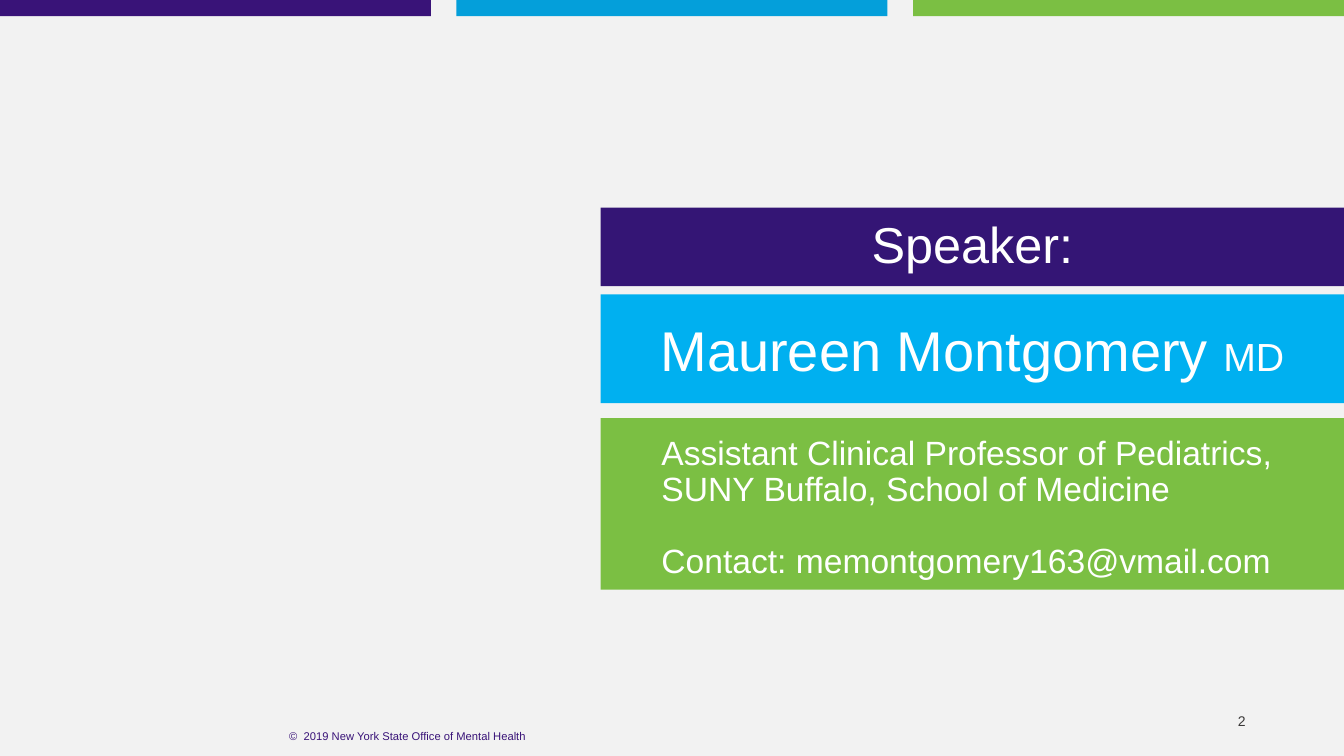
from pptx import Presentation
from pptx.dml.color import RGBColor
from pptx.enum.shapes import MSO_SHAPE as Preset
from pptx.enum.text import MSO_ANCHOR as Anchor, PP_ALIGN as Align
from pptx.util import Cm, Pt

COLORS = {
    "page": "F2F2F2",
    "purple": "391378",
    "blue": "049FDA",
    "green": "7BBF43",
    "title_band": "341575",
    "name_band": "00B0F0",
    "white": "FFFFFF",
    "page_number": "3A3838",
}
SLIDE_WIDTH, SLIDE_HEIGHT = 33.87, 19.05
STRIPE_WIDTH, STRIPE_HEIGHT = 10.86, 0.41
BAND_LEFT, BAND_WIDTH = 15.14, 18.73


def rgb(name):
    return RGBColor.from_string(COLORS[name])


def add_band(slide, left, top, width, height, color):
    band = slide.shapes.add_shape(
        Preset.RECTANGLE, Cm(left), Cm(top), Cm(width), Cm(height))
    band.shadow.inherit = False
    band.fill.solid()
    band.fill.fore_color.rgb = rgb(color)
    band.line.fill.background()
    return band


def add_text_box(slide, left, top, width, height):
    return slide.shapes.add_textbox(Cm(left), Cm(top), Cm(width), Cm(height))


def write(shape, paragraphs, color="white", align=Align.CENTER, spacing=1.0,
          gap=0, anchor=Anchor.MIDDLE, wrap=True):
    frame = shape.text_frame
    frame.word_wrap = wrap
    frame.vertical_anchor = anchor
    frame.margin_left = frame.margin_right = Cm(0.13)
    frame.margin_top = frame.margin_bottom = Cm(0.13)
    for index, runs in enumerate(paragraphs):
        paragraph = frame.add_paragraph() if index else frame.paragraphs[0]
        paragraph.alignment = align
        paragraph.line_spacing = spacing
        if index:
            paragraph.space_before = Pt(gap)
        for text, size in runs:
            for line_number, line in enumerate(text.split("\n")):
                if line_number:
                    paragraph.add_line_break()
                run = paragraph.add_run()
                run.text = line
                run.font.name = "Arial"
                run.font.size = Pt(size)
                run.font.color.rgb = rgb(color)


def add_stripes(slide):
    step = (SLIDE_WIDTH - STRIPE_WIDTH) / 2
    for index, color in enumerate(("purple", "blue", "green")):
        add_band(slide, index * step, 0, STRIPE_WIDTH, STRIPE_HEIGHT, color)


def add_footer(slide):
    copyright_line = add_text_box(slide, 4.6, 18.24, 11.35, 0.61)
    write(copyright_line, [[("©  2019 New York State Office of Mental Health", 8)]],
          color="purple")
    page_number = add_text_box(slide, 31.04, 17.83, 0.48, 0.66)
    write(page_number, [[("2", 10)]], color="page_number", align=Align.RIGHT,
          wrap=False)


def add_speaker(slide):
    heading = add_band(slide, BAND_LEFT, 5.23, BAND_WIDTH, 1.98, "title_band")
    write(heading, [[("Speaker:", 36)]], spacing=0.9)

    add_band(slide, BAND_LEFT, 7.42, BAND_WIDTH, 2.74, "name_band")
    speaker_name = add_text_box(slide, BAND_LEFT, 8.46, BAND_WIDTH, 1.3)
    write(speaker_name, [[("Maureen Montgomery ", 40), ("MD", 28)]], spacing=0.5)

    add_band(slide, BAND_LEFT, 10.54, BAND_WIDTH, 4.32, "green")
    details = add_text_box(slide, 16.54, 10.87, 15.9, 3.99)
    write(details, [
        [("Assistant Clinical Professor of Pediatrics,\n"
          "SUNY Buffalo, School of Medicine", 24)],
        [("Contact: memontgomery163@vmail.com", 24)],
    ], align=Align.LEFT, spacing=0.9, gap=25, anchor=Anchor.TOP)


def main():
    deck = Presentation()
    deck.slide_width, deck.slide_height = Cm(SLIDE_WIDTH), Cm(SLIDE_HEIGHT)
    slide = deck.slides.add_slide(deck.slide_layouts[6])
    slide.background.fill.solid()
    slide.background.fill.fore_color.rgb = rgb("page")
    add_stripes(slide)
    add_footer(slide)
    add_speaker(slide)
    deck.save("out.pptx")


if __name__ == "__main__":
    main()
